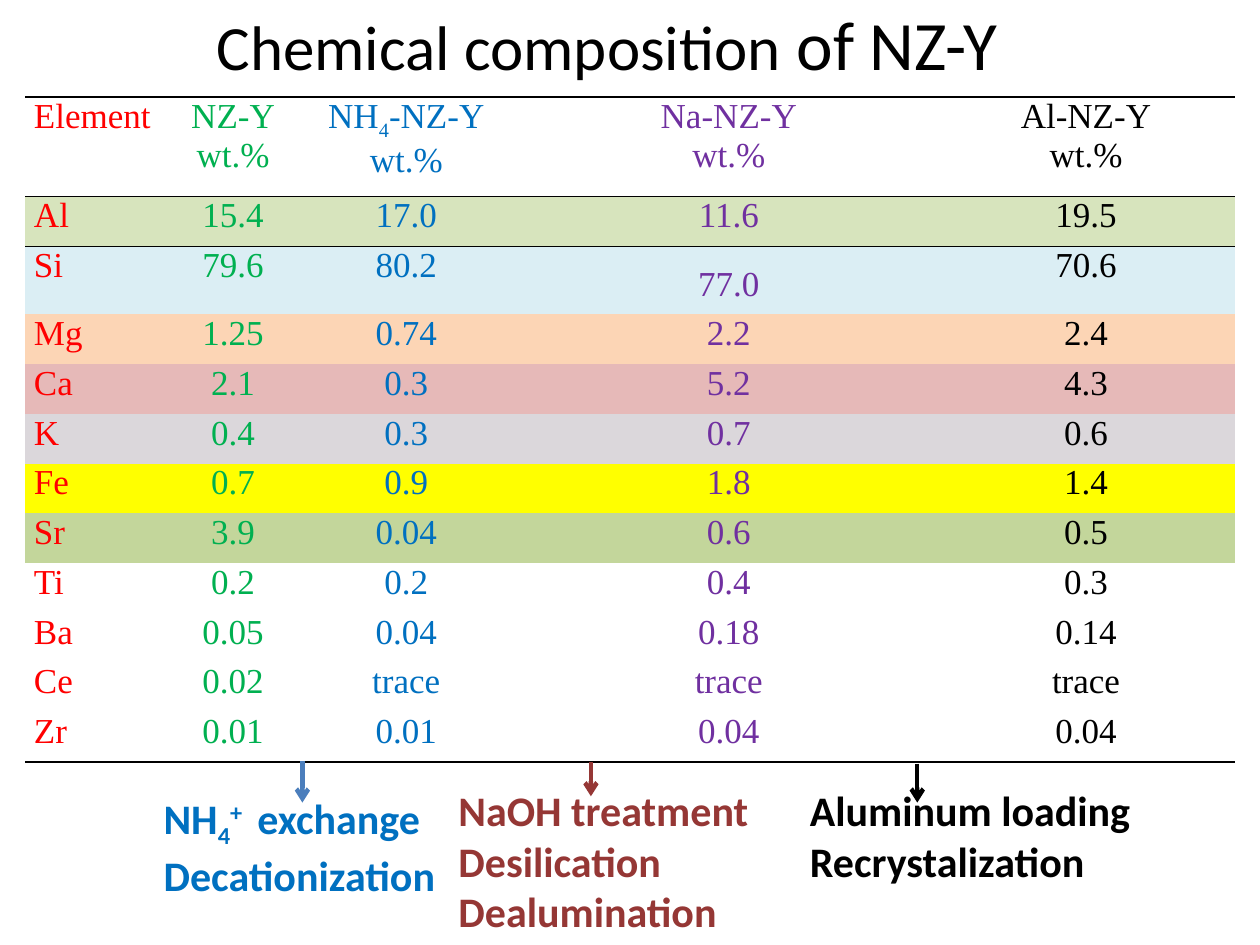
from dataclasses import dataclass

from lxml import etree
from pptx import Presentation
from pptx.dml.color import RGBColor
from pptx.enum.shapes import MSO_CONNECTOR
from pptx.enum.text import MSO_ANCHOR, MSO_AUTO_SIZE, PP_ALIGN
from pptx.oxml.ns import qn
from pptx.util import Inches, Pt

CENTER, JUSTIFY, LEFT = PP_ALIGN.CENTER, PP_ALIGN.JUSTIFY, PP_ALIGN.LEFT
MIDDLE = MSO_ANCHOR.MIDDLE
NO_FIT, GROW = MSO_AUTO_SIZE.NONE, MSO_AUTO_SIZE.SHAPE_TO_FIT_TEXT
STRAIGHT = MSO_CONNECTOR.STRAIGHT
TITLE_ONLY = 5
PLAIN_TABLE_STYLE = "{2D5ABB26-0587-4C30-8999-92F81FD0307C}"

COLORS = {
    "black": "000000", "red": "FF0000", "green": "00B050", "blue": "0070C0",
    "purple": "7030A0", "maroon": "953735", "steel": "4B7EBC",
    "pale green": "D7E4BD", "pale blue": "DBEEF4", "peach": "FCD5B5",
    "pink": "E6B9B8", "gray": "DBD7DB", "yellow": "FFFF00", "olive": "C3D69B",
}


@dataclass(frozen=True)
class Piece:
    """Text with one size and one baseline shift (in percent)."""
    text: str
    baseline: int = 0
    size: float | None = None


@dataclass(frozen=True)
class Treatment:
    left: float
    top: float
    width: float
    height: float
    lines: list[list[Piece]]
    color: str
    arrow_x: float
    arrow_top: float
    arrow_bottom: float
    arrow_color: str


@dataclass(frozen=True)
class ElementRow:
    values: tuple[str, ...]
    fill: str | None = None


HEADER = [
    [[Piece("Element")]],
    [[Piece("NZ-Y")], [Piece("wt.%")]],
    [[Piece("NH"), Piece("4", -25), Piece("-NZ-Y")], [Piece("wt.%")]],
    [[Piece("Na-NZ-Y")], [Piece("wt.%")]],
    [[Piece("Al-NZ-Y")], [Piece("wt.%")]],
]
ELEMENT_ROWS = [
    ElementRow(("Al", "15.4", "17.0", "11.6", "19.5"), "pale green"),
    ElementRow(("Si", "79.6", "80.2", "77.0", "70.6"), "pale blue"),
    ElementRow(("Mg", "1.25", "0.74", "2.2", "2.4"), "peach"),
    ElementRow(("Ca", "2.1", "0.3", "5.2", "4.3"), "pink"),
    ElementRow(("K", "0.4", "0.3", "0.7", "0.6"), "gray"),
    ElementRow(("Fe", "0.7", "0.9", "1.8", "1.4"), "yellow"),
    ElementRow(("Sr", "3.9", "0.04", "0.6", "0.5"), "olive"),
    ElementRow(("Ti", "0.2", "0.2", "0.4", "0.3")),
    ElementRow(("Ba", "0.05", "0.04", "0.18", "0.14")),
    ElementRow(("Ce", "0.02", "trace", "trace", "trace")),
    ElementRow(("Zr", "0.01", "0.01", "0.04", "0.04")),
]
COLUMN_WIDTHS = [1.18, 0.94, 1.81, 3.31, 2.36]
COLUMN_COLORS = ["red", "green", "blue", "purple", "black"]
TABLE_HEIGHT, HEADER_HEIGHT, SILICON_HEIGHT = 5.28, 0.79, 0.54
SILICON_ROW, SODIUM_COLUMN = 2, 3

TREATMENTS = [
    Treatment(1.2, 6.24, 2.38, 0.91,
              [[Piece("NH"), Piece("4", -25), Piece("+ ", 30), Piece(" exchange")],
               [Piece("Decationization")]],
              "blue", 2.4, 6.04, 6.37, "steel"),
    Treatment(3.54, 6.18, 2.68, 1.31,
              [[Piece("NaOH treatment")], [Piece("Desilication")], [Piece("Dealumination")]],
              "maroon", 4.69, 6.05, 6.32, "maroon"),
    Treatment(6.33, 6.18, 3.71, 0.91,
              [[Piece("Aluminum loading")], [Piece("Recrystalization")]],
              "black", 7.28, 6.06, 6.37, "black"),
]


def rgb(name: str) -> RGBColor:
    return RGBColor.from_string(COLORS[name])


def write_lines(frame, lines: list[list[Piece]], font_name: str, size: float,
                color: str, alignment, bold: bool = False) -> None:
    for index, pieces in enumerate(lines):
        paragraph = frame.add_paragraph() if index else frame.paragraphs[0]
        paragraph.alignment = alignment
        for piece in pieces:
            run = paragraph.add_run()
            run.text = piece.text
            run.font.name = font_name
            run.font.size = Pt(piece.size or size)
            run.font.bold = bold
            run.font.color.rgb = rgb(color)
            if piece.baseline:
                run._r.get_or_add_rPr().set("baseline", str(piece.baseline * 1000))


def add_title(slide) -> None:
    title = slide.shapes.title
    title.left, title.top = Inches(0.38), Inches(0.07)
    title.width, title.height = Inches(9), Inches(0.54)
    title.text_frame.auto_size = NO_FIT
    title.text_frame.vertical_anchor = MIDDLE
    pieces = [Piece("Chemical composition"), Piece(" of NZ-Y ", size=39.6)]
    write_lines(title.text_frame, [pieces], "Calibri", 36, "black", CENTER)


def add_rules(cell, sides: list[str]) -> None:
    """Draw black 1 pt borders, sides given in schema order (lnT, lnB)."""
    properties = cell._tc.get_or_add_tcPr()
    for position, side in enumerate(sides):
        border = etree.Element(qn(f"a:{side}"), w=str(Pt(1)))
        fill = etree.SubElement(border, qn("a:solidFill"))
        etree.SubElement(fill, qn("a:srgbClr"), val=COLORS["black"])
        properties.insert(position, border)


def add_composition_table(slide) -> None:
    rows = [ElementRow(())] + ELEMENT_ROWS
    table = slide.shapes.add_table(
        len(rows), len(COLUMN_WIDTHS), Inches(0.2), Inches(0.77),
        Inches(sum(COLUMN_WIDTHS)), Inches(TABLE_HEIGHT)).table
    table.first_row = table.horz_banding = False
    table._tbl.tblPr.find(qn("a:tableStyleId")).text = PLAIN_TABLE_STYLE
    for column, width in zip(table.columns, COLUMN_WIDTHS):
        column.width = Inches(width)
    plain_height = (TABLE_HEIGHT - HEADER_HEIGHT - SILICON_HEIGHT) / (len(rows) - 2)
    special_heights = {0: HEADER_HEIGHT, SILICON_ROW: SILICON_HEIGHT}
    rules = {0: ["lnT", "lnB"], 1: ["lnT"], len(rows) - 1: ["lnB"]}

    for row_index, row in enumerate(rows):
        table.rows[row_index].height = Inches(special_heights.get(row_index, plain_height))
        contents = [[[Piece(value)]] for value in row.values] or HEADER
        for column_index, lines in enumerate(contents):
            cell = table.cell(row_index, column_index)
            cell.margin_left = cell.margin_right = Inches(0.07)
            cell.margin_top = cell.margin_bottom = 0
            if row.fill:
                cell.fill.solid()
                cell.fill.fore_color.rgb = rgb(row.fill)
            else:
                cell.fill.background()
            write_lines(cell.text_frame, lines, "Times New Roman", 20,
                        COLUMN_COLORS[column_index], CENTER if column_index else JUSTIFY)
            add_rules(cell, rules.get(row_index, []))
    table.cell(SILICON_ROW, SODIUM_COLUMN).text_frame.paragraphs[0].line_spacing = 1.5


def add_treatment(slide, treatment: Treatment) -> None:
    box = slide.shapes.add_textbox(Inches(treatment.left), Inches(treatment.top),
                                   Inches(treatment.width), Inches(treatment.height))
    box.text_frame.word_wrap = True
    box.text_frame.auto_size = GROW
    write_lines(box.text_frame, treatment.lines, "Calibri", 24, treatment.color, LEFT, bold=True)

    arrow = slide.shapes.add_connector(
        STRAIGHT, Inches(treatment.arrow_x), Inches(treatment.arrow_top),
        Inches(treatment.arrow_x), Inches(treatment.arrow_bottom))
    arrow.line.color.rgb = rgb(treatment.arrow_color)
    arrow.line.width = Pt(2.5)
    etree.SubElement(arrow.line._get_or_add_ln(), qn("a:tailEnd"), type="arrow")
    etree.SubElement(arrow._element.spPr, qn("a:effectLst"))


def main() -> None:
    presentation = Presentation()
    presentation.slide_width, presentation.slide_height = Inches(10), Inches(7.5)
    slide = presentation.slides.add_slide(presentation.slide_layouts[TITLE_ONLY])
    add_title(slide)
    add_composition_table(slide)
    for treatment in TREATMENTS:
        add_treatment(slide, treatment)
    presentation.save("out.pptx")


if __name__ == "__main__":
    main()
